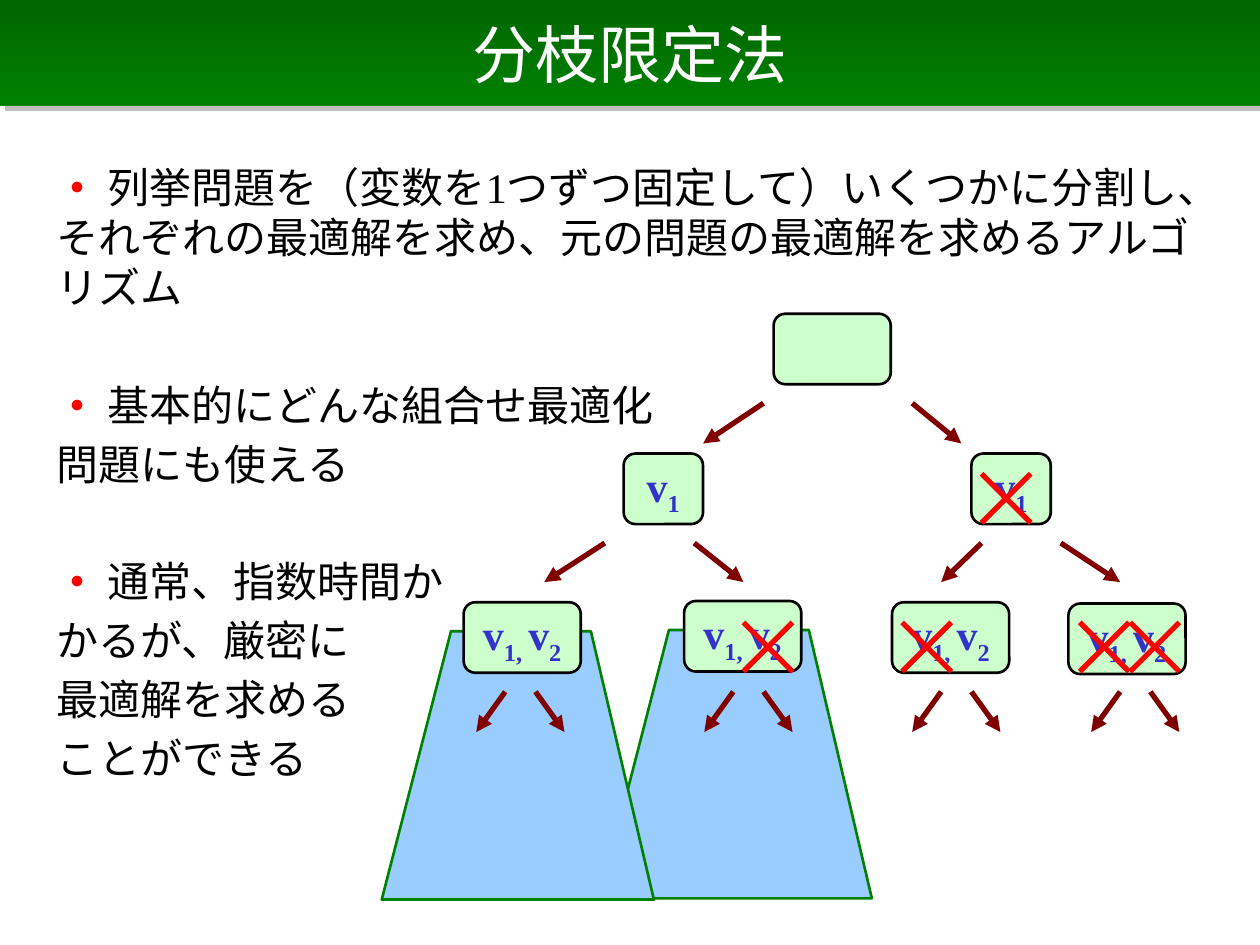
from lxml import etree
from pptx import Presentation
from pptx.dml.color import RGBColor
from pptx.enum.shapes import MSO_CONNECTOR, MSO_SHAPE
from pptx.enum.text import MSO_ANCHOR, PP_ALIGN
from pptx.oxml import parse_xml
from pptx.oxml.ns import nsdecls, qn
from pptx.util import Inches, Pt

CENTER, MIDDLE = PP_ALIGN.CENTER, MSO_ANCHOR.MIDDLE
STRAIGHT, ROUNDED = MSO_CONNECTOR.STRAIGHT, MSO_SHAPE.ROUNDED_RECTANGLE

WHITE = RGBColor(0xFF, 0xFF, 0xFF)
BLACK = RGBColor(0, 0, 0)
RED = RGBColor(0xFF, 0, 0)
MAROON = RGBColor(0x80, 0, 0)
DARK_GREEN = RGBColor(0, 0x66, 0)
GREEN = RGBColor(0, 0x80, 0)
PALE_GREEN = RGBColor(0xCC, 0xFF, 0xCC)
SKY = RGBColor(0x99, 0xCC, 0xFF)
INDIGO = RGBColor(0x33, 0x33, 0xCC)
FONT = "Times New Roman"

LINE_GAP, ITEM_GAP = 4.8, 38.4
ITEMS = [
    ["列挙問題を（変数を1つずつ固定して）いくつかに分割し、"
     "それぞれの最適解を求め、元の問題の最適解を求めるアルゴリズム"],
    ["基本的にどんな組合せ最適化", "問題にも使える"],
    ["通常、指数時間か", "かるが、厳密に", "最適解を求める", "ことができる"],
]

NODE_H = 0.56
ONE_VAR = [("v", "1")]
TWO_VARS = [("v", "1, "), ("v", "2")]
# left, top, width, variables
NODES = [
    (6.14, 2.49, 0.93, []),
    (4.95, 3.6, 0.63, ONE_VAR),
    (7.71, 3.6, 0.63, ONE_VAR),
    (3.68, 4.78, 0.93, TWO_VARS),
    (5.43, 4.77, 0.93, TWO_VARS),
    (7.08, 4.78, 0.93, TWO_VARS),
    (8.48, 4.79, 0.93, TWO_VARS),
]
# left and right arrow of each branching: x1, x2, then the top and bottom
BRANCHES = [
    ((6.06, 5.58), (7.24, 7.63), 3.2, 3.52),
    ((4.8, 4.32), (5.51, 5.9), 4.31, 4.62),
    ((7.79, 7.47), (8.42, 8.89), 4.31, 4.62),
]
LEAF_MIDDLES = [4.13, 5.94, 7.59, 9.01]
CROSSES = [(7.79, 3.76), (5.9, 4.94), (7.16, 4.94), (8.57, 4.94), (8.97, 4.94)]
CROSS = 0.39


def style(r, color, size=24, bold=False):
    r.font.name, r.font.size, r.font.bold = FONT, Pt(size), bold
    r.font.color.rgb = color


def add_run(p, text, color, bold=False):
    r = p.add_run()
    r.text = text
    style(r, color, bold=bold)
    return r


def paint(sp, fill, line):
    sp.shadow.inherit = False
    sp.fill.solid()
    sp.fill.fore_color.rgb = fill
    sp.line.color.rgb = line
    sp.line.width = Pt(1.5)


def add_line(s, x1, y1, x2, y2, color, arrow=False):
    line = s.shapes.add_connector(
        STRAIGHT, Inches(x1), Inches(y1), Inches(x2), Inches(y2))
    line.line.color.rgb = color
    line.line.width = Pt(3)
    if arrow:
        etree.SubElement(line.line._get_or_add_ln(), qn("a:tailEnd"), type="triangle")
    etree.SubElement(line._element.spPr, qn("a:effectLst"))


def add_title(s, left, top, width, height):
    sp = s.shapes.title
    sp.left, sp.top = Inches(left), Inches(top)
    sp.width, sp.height = Inches(width), Inches(height)
    sp.fill.gradient()
    sp.fill.gradient_angle = 270
    for stop, color in zip(sp.fill.gradient_stops, (DARK_GREEN, GREEN)):
        stop.color.rgb = color
    sp.line.fill.background()
    sp._element.spPr.append(parse_xml(
        f'<a:effectLst {nsdecls("a")}><a:outerShdw dist="53340" dir="2700000">'
        '<a:srgbClr val="808080"><a:alpha val="50000"/></a:srgbClr>'
        '</a:outerShdw></a:effectLst>'))
    tf = sp.text_frame
    tf.text = "分枝限定法"
    tf.vertical_anchor = MIDDLE
    tf.paragraphs[0].alignment = CENTER
    style(tf.paragraphs[0].runs[0], WHITE, 36)


def add_body(s, left, top, width, height):
    tf = s.shapes.add_textbox(
        Inches(left), Inches(top), Inches(width), Inches(height)).text_frame
    tf.word_wrap = True
    p = tf.paragraphs[0]
    for i, lines in enumerate(ITEMS):
        for j, line in enumerate(lines):
            if i or j:
                p = tf.add_paragraph()
            p.space_before = Pt(ITEM_GAP if i and not j else LINE_GAP)
            if j == 0:
                add_run(p, "•", RED, bold=True)
                line = " " + line
            add_run(p, line, BLACK)


def add_subtree(s, left, top, width, height):
    """Trapezoid standing for everything below a node."""
    corners = [(0.55, 0), (0, height), (width, height), (1.66, 0)]
    points = [(Inches(left + x), Inches(top + y)) for x, y in corners]
    fb = s.shapes.build_freeform(*points[0])
    fb.add_line_segments(points[1:], close=True)
    paint(fb.convert_to_shape(), SKY, GREEN)


def add_node(s, left, top, width, variables):
    sp = s.shapes.add_shape(
        ROUNDED, Inches(left), Inches(top), Inches(width), Inches(NODE_H))
    paint(sp, PALE_GREEN, BLACK)
    tf = sp.text_frame
    tf.word_wrap = False
    tf.vertical_anchor = MIDDLE
    p = tf.paragraphs[0]
    p.alignment = CENTER
    for name, index in variables:
        add_run(p, name, INDIGO, bold=True)
        r = add_run(p, index, INDIGO, bold=True)
        r._r.get_or_add_rPr().set("baseline", "-25000")


def add_cross(s, left, top):
    right, bottom = left + CROSS, top + CROSS
    add_line(s, right, top, left, bottom, RED)
    add_line(s, right, bottom, left, top, RED)


def add_tree(s):
    for left, top in ((4.76, 5), (3.03, 5.01)):
        add_subtree(s, left, top, 2.16, 2.13)
    for node in NODES:
        add_node(s, *node)
    for *arrows, top, bottom in BRANCHES:
        for x1, x2 in arrows:
            add_line(s, x1, top, x2, bottom, MAROON, arrow=True)
    for mid in LEAF_MIDDLES:
        for side in (-1, 1):
            add_line(s, mid + side * 0.12, 5.49, mid + side * 0.35, 5.81,
                     MAROON, arrow=True)
    for left, top in CROSSES:
        add_cross(s, left, top)


def main():
    prs = Presentation()
    prs.slide_width, prs.slide_height = Inches(10), Inches(7.5)
    s = prs.slides.add_slide(prs.slide_layouts[5])
    add_title(s, 0, 0, 10, 0.84)
    add_body(s, 0.35, 1.23, 9.37, 5.83)
    add_tree(s)
    prs.save("out.pptx")


if __name__ == "__main__":
    main()
